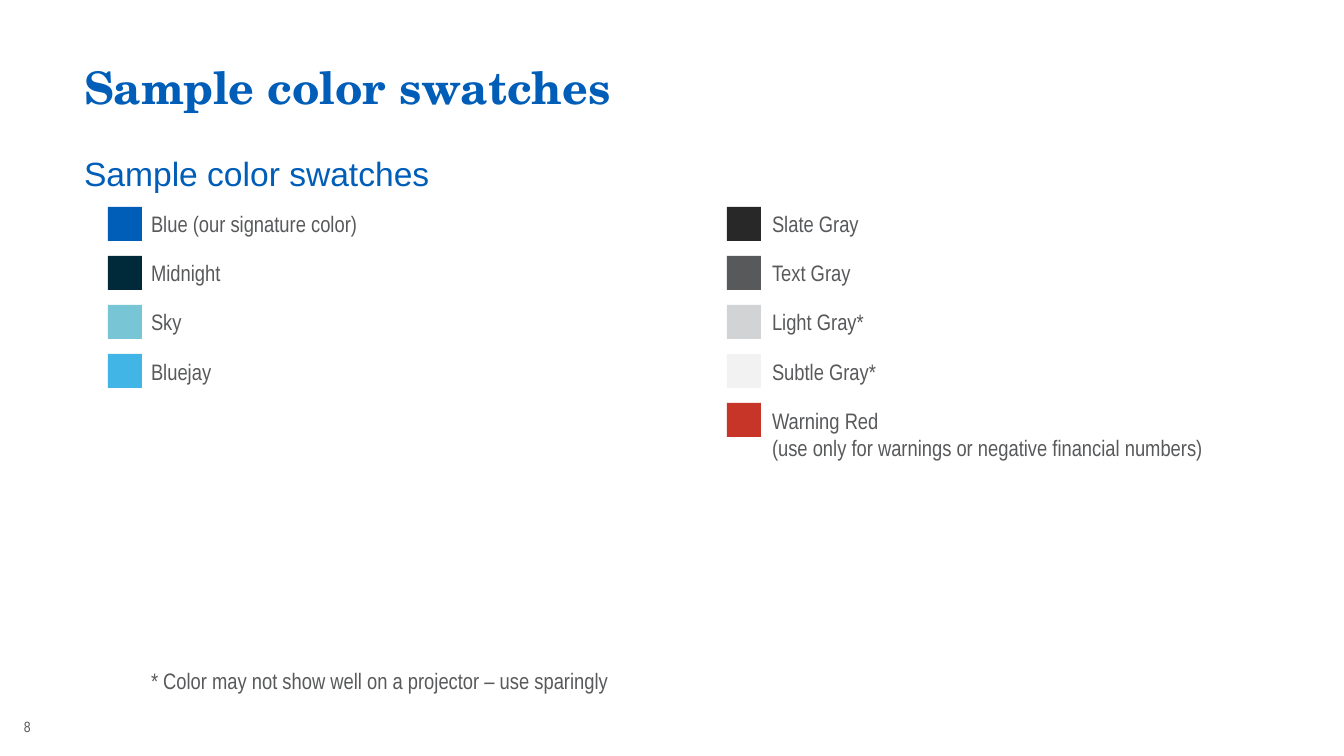
from copy import deepcopy
from dataclasses import dataclass

from pptx import Presentation
from pptx.dml.color import RGBColor
from pptx.enum.shapes import MSO_SHAPE
from pptx.enum.text import MSO_ANCHOR, PP_ALIGN
from pptx.oxml.ns import qn
from pptx.util import Inches, Pt

PX = Inches(10) / 1344


def px(n):
    return round(n * PX)


@dataclass(frozen=True)
class Theme:
    blue: str = "005EB8"
    text: str = "58595B"
    serif: str = "TeX Gyre Schola"
    sans: str = "Arial"
    narrow: str = "Arial Narrow"
    title_size: int = 24
    heading_size: int = 18
    body_size: int = 12
    number_size: int = 8


class Deck:
    def __init__(self, theme):
        self.theme = theme
        self.prs = Presentation()
        self.prs.slide_width, self.prs.slide_height = px(1344), px(756)
        self.s = self.prs.slides.add_slide(self.prs.slide_layouts[5])

    def set_text(self, sp, text, font, size, color, bold=False,
                 anchor=MSO_ANCHOR.TOP, indent=0, after=0, spacing=1.0):
        tf = sp.text_frame
        tf.word_wrap = True
        tf.margin_left = tf.margin_top = tf.margin_right = tf.margin_bottom = 0
        tf.vertical_anchor = anchor
        tf.text = text
        for p in tf.paragraphs:
            p.alignment = PP_ALIGN.LEFT
            p.space_before, p.space_after = Pt(0), Pt(after)
            p.line_spacing = spacing
            p._p.get_or_add_pPr().set("marL", str(px(indent)))
            for r in p.runs:
                r.font.name, r.font.size, r.font.bold = font, Pt(size), bold
                r.font.color.rgb = RGBColor.from_string(color)
            for br in p._p.findall(qn("a:br")):
                br.append(deepcopy(p.runs[0]._r.rPr))

    def title(self, text, x, y, w, h):
        t, sp = self.theme, self.s.shapes.title
        sp.left, sp.top, sp.width, sp.height = map(px, (x, y, w, h))
        self.set_text(sp, text, t.serif, t.title_size, t.blue, bold=True,
                      anchor=MSO_ANCHOR.MIDDLE)

    def text(self, text, x, y, w, h, **style):
        sp = self.s.shapes.add_textbox(*map(px, (x, y, w, h)))
        self.set_text(sp, text, **style)

    def heading(self, text, x, y, w, h):
        t = self.theme
        self.text(text, x, y, w, h, font=t.sans, size=t.heading_size,
                  color=t.blue, anchor=MSO_ANCHOR.MIDDLE)

    def body(self, text, x, y, w, h, after=12, spacing=1.0):
        t = self.theme
        self.text(text, x, y, w, h, font=t.narrow, size=t.body_size,
                  color=t.text, indent=67, after=after, spacing=spacing)

    def number(self, text, x, y, w, h):
        t = self.theme
        self.text(text, x, y, w, h, font=t.narrow, size=t.number_size,
                  color=t.text)

    def swatch(self, color, x, y, size=34):
        sp = self.s.shapes.add_shape(MSO_SHAPE.RECTANGLE,
                                     *map(px, (x, y, size, size)))
        sp.shadow.inherit = False
        sp.fill.solid()
        sp.fill.fore_color.rgb = RGBColor.from_string(color)
        sp.line.fill.background()

    def swatches(self, items, swatch_x, text_x, top=207, pitch=49):
        for i, (color, _) in enumerate(items):
            self.swatch(color, swatch_x, top + i * pitch)
        labels = "\n".join(label for _, label in items)
        self.body(labels, text_x, top + 3, 555, 371)


def main():
    theme = Theme()
    deck = Deck(theme)
    blues = [
        (theme.blue, "Blue (our signature color)"),
        ("002A3A", "Midnight"),
        ("77C5D5", "Sky"),
        ("41B6E6", "Bluejay"),
    ]
    grays = [
        ("282829", "Slate Gray"),
        (theme.text, "Text Gray"),
        ("D1D3D4", "Light Gray*"),
        ("F2F2F2", "Subtle Gray*"),
        ("C63527", "Warning Red\v(use only for warnings or negative financial numbers)"),
    ]
    deck.title("Sample color swatches", 84, 58, 1176, 58)
    deck.heading("Sample color swatches", 84, 151, 555, 44)
    deck.swatches(blues, 108, 84)
    deck.swatches(grays, 727, 705)
    deck.body("* Color may not show well on a projector – use sparingly",
              84, 665, 555, 31, spacing=1.1)
    deck.number("8", 24, 718, 153, 17)
    deck.prs.save("out.pptx")


if __name__ == "__main__":
    main()
